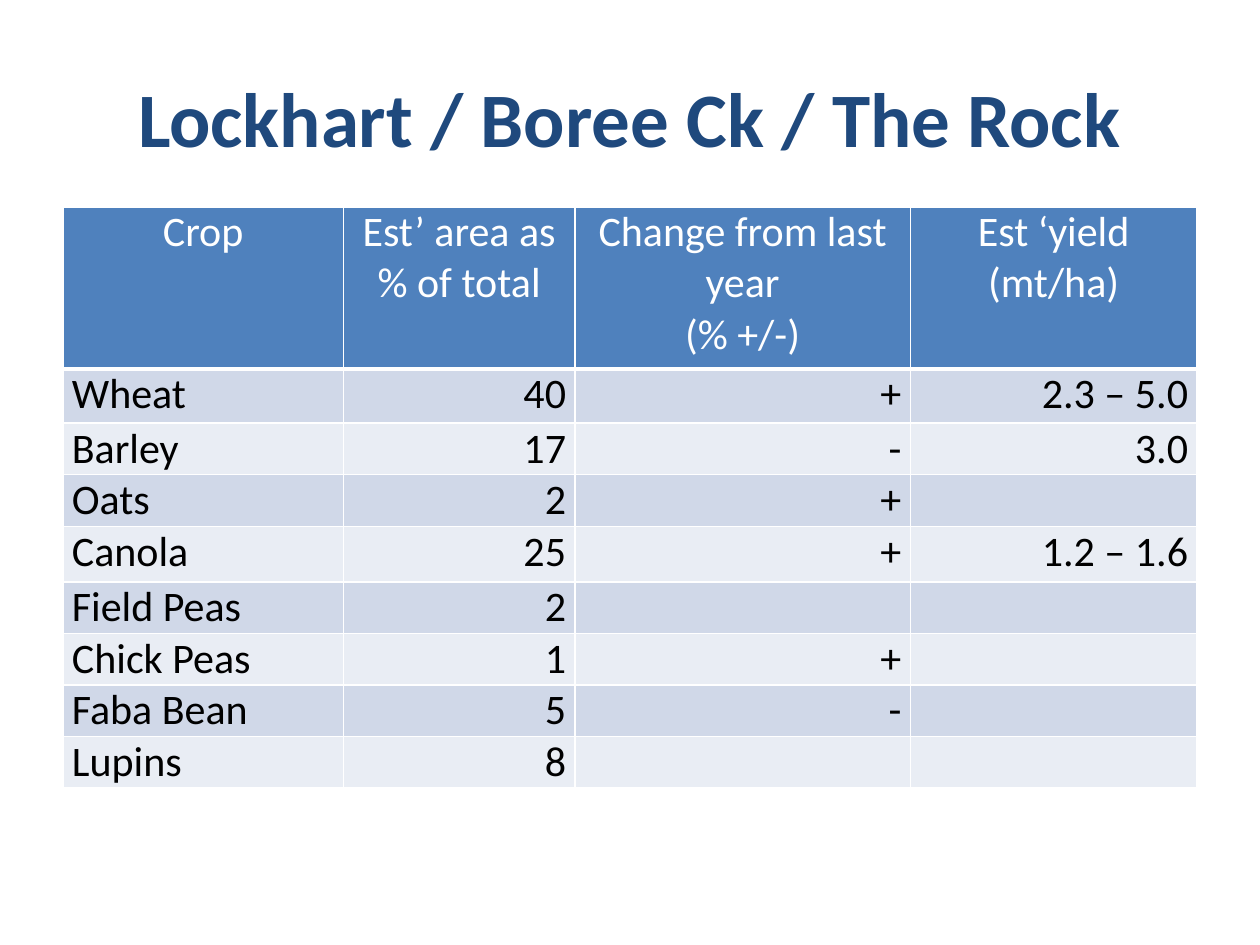
from lxml.etree import SubElement
from pptx import Presentation
from pptx.dml.color import RGBColor as RGB
from pptx.enum.text import MSO_ANCHOR as Anchor, PP_ALIGN as Align
from pptx.oxml.ns import qn
from pptx.util import Cm, Pt

TITLE = "Lockhart / Boree Ck / The Rock"
HEADER = ["Crop", "Est’ area as % of total",
          "Change from last year\n(% +/-)", "Est ‘yield\n(mt/ha)"]
CROPS = [
    ("Wheat", "40", "+", "2.3 – 5.0"),
    ("Barley", "17", "-", "3.0"),
    ("Oats", "2", "+", ""),
    ("Canola", "25", "+", "1.2 – 1.6"),
    ("Field Peas", "2", "", ""),
    ("Chick Peas", "1", "+", ""),
    ("Faba Bean", "5", "-", ""),
    ("Lupins", "8", "", ""),
]
THEME = {
    "font": "Calibri", "title_size": 44, "table_size": 24,
    "title": "1F497D", "header": "4F81BD", "bands": ("D0D8E8", "E9EDF4"),
    "header_text": "FFFFFF", "body_text": "000000", "border": "FFFFFF",
}
LEFT, WIDTH = 1.27, 22.86
COL_WIDTHS = [5.65, 4.67, 6.76, 5.78]
HEADER_HEIGHT, ROW_HEIGHT = 3.27, 1.04
TALL_ROWS = {"Wheat": 1.09, "Canola": 1.12}
CELL_FORMAT = {"margin_left": Cm(0.18), "margin_right": Cm(0.18),
               "margin_top": 0, "margin_bottom": 0}


def write(tf, text, align, size, color, bold=False):
    """Fill a text frame, one paragraph per line of text."""
    tf.text = text
    for p in tf.paragraphs:
        p.alignment = align
        fmt = {"name": THEME["font"], "size": Pt(size), "bold": bold}
        for name, value in fmt.items():
            setattr(p.font, name, value)
        for r in p.runs:
            for name, value in fmt.items():
                setattr(r.font, name, value)
            r.font.color.rgb = RGB.from_string(color)


def set_borders(cell, top, bottom):
    """Draw all four borders; top and bottom widths are in points."""
    props = cell._tc.get_or_add_tcPr()
    for side, width in zip("LRTB", (1, 1, top, bottom)):
        ln = SubElement(props, qn(f"a:ln{side}"), w=str(Pt(width)))
        fill = SubElement(ln, qn("a:solidFill"))
        SubElement(fill, qn("a:srgbClr"), val=THEME["border"])


def add_title(s):
    tf = s.shapes.add_textbox(Cm(LEFT), Cm(0.76), Cm(WIDTH), Cm(3.18)).text_frame
    tf.word_wrap = True
    tf.vertical_anchor = Anchor.MIDDLE
    write(tf, TITLE, Align.CENTER, THEME["title_size"], THEME["title"], True)


def add_crop_table(s):
    rows = [HEADER, *CROPS]
    heights = [HEADER_HEIGHT] + [TALL_ROWS.get(c[0], ROW_HEIGHT) for c in CROPS]
    table = s.shapes.add_table(len(rows), len(HEADER), Cm(LEFT), Cm(4.17),
                               Cm(WIDTH), Cm(sum(heights))).table
    for col, width in zip(table.columns, COL_WIDTHS):
        col.width = Cm(width)
    for i, (values, height) in enumerate(zip(rows, heights)):
        table.rows[i].height = Cm(height)
        is_header = i == 0
        fill = THEME["header"] if is_header else THEME["bands"][(i - 1) % 2]
        color = THEME["header_text" if is_header else "body_text"]
        for j, text in enumerate(values):
            cell = table.cell(i, j)
            for name, value in CELL_FORMAT.items():
                setattr(cell, name, value)
            set_borders(cell, 3 if i == 1 else 1, 3 if is_header else 1)
            cell.fill.solid()
            cell.fill.fore_color.rgb = RGB.from_string(fill)
            align = Align.CENTER if is_header else Align.RIGHT if j else Align.LEFT
            write(cell.text_frame, text, align, THEME["table_size"], color)


def main():
    prs = Presentation()
    prs.slide_width, prs.slide_height = Cm(25.4), Cm(19.05)
    s = prs.slides.add_slide(prs.slide_layouts[6])
    add_title(s)
    add_crop_table(s)
    prs.save("out.pptx")


if __name__ == "__main__":
    main()
